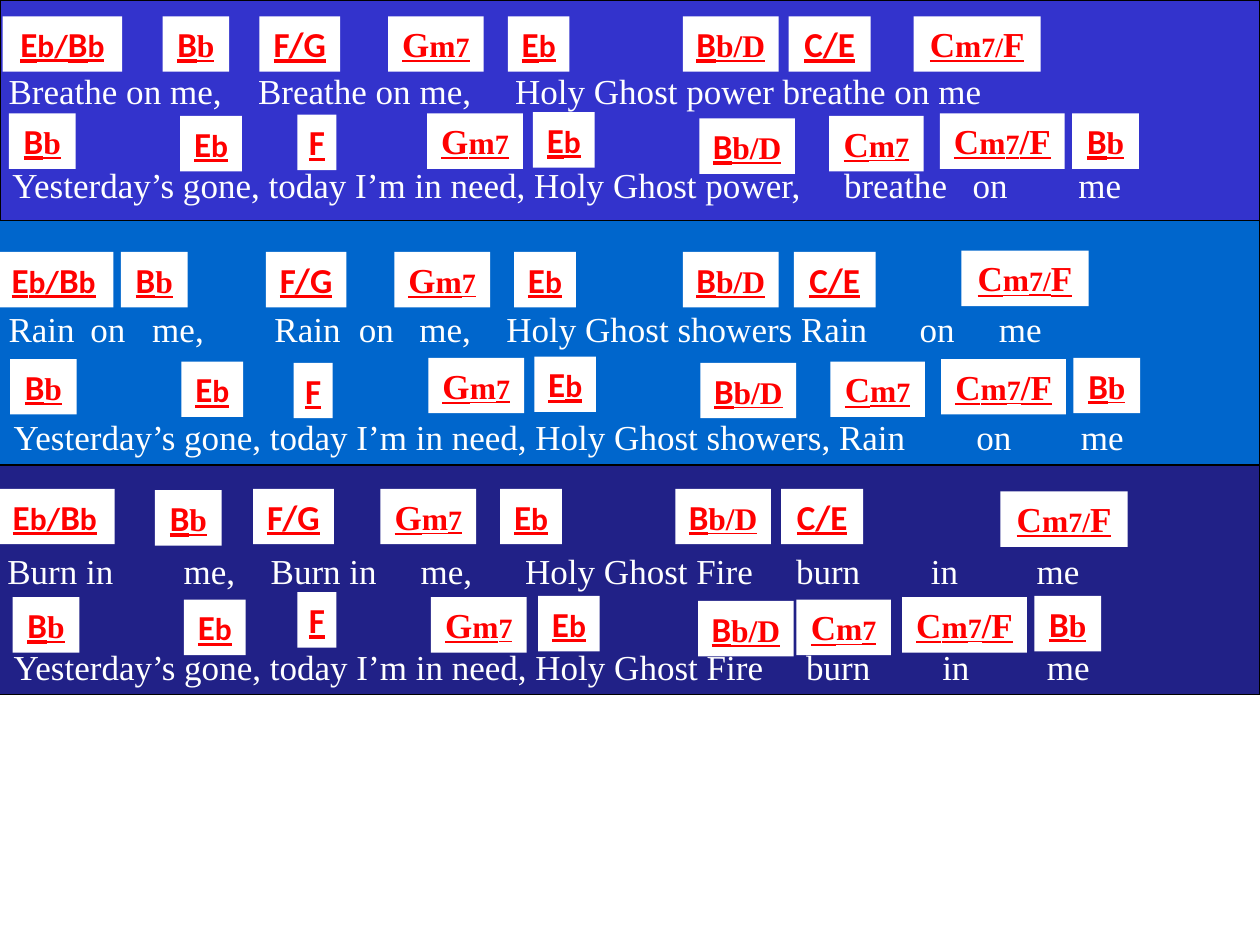
"""Build a song slide with three verses of lyrics and chord labels."""
from dataclasses import dataclass

from lxml import etree
from pptx import Presentation
from pptx.dml.color import RGBColor
from pptx.enum.shapes import MSO_SHAPE
from pptx.enum.text import MSO_ANCHOR, MSO_AUTO_SIZE, PP_ALIGN
from pptx.oxml.ns import qn
from pptx.util import Inches, Pt

RECTANGLE = MSO_SHAPE.RECTANGLE
TOP = MSO_ANCHOR.TOP
FIXED_SIZE = MSO_AUTO_SIZE.NONE
CENTER = PP_ALIGN.CENTER


@dataclass(frozen=True)
class Theme:
    white: RGBColor = RGBColor(0xFF, 0xFF, 0xFF)
    black: RGBColor = RGBColor(0, 0, 0)
    chord: RGBColor = RGBColor(0xFF, 0, 0)
    breathe: RGBColor = RGBColor(0x33, 0x33, 0xCC)
    rain: RGBColor = RGBColor(0, 0x66, 0xCC)
    burn: RGBColor = RGBColor(0x21, 0x21, 0x87)
    serif: str = "Times New Roman"
    sans: str = "Calibri"
    large: int = 20
    medium: int = 18
    small: int = 16
    outline: float = 0.75


theme = Theme()
ROW_HEIGHT = 0.44
TEXT_INSET = 0.1

BANDS = [
    (-0.03, 3.69, 10.03, 1.82, theme.burn),
    (-0.03, 1.75, 10.03, 1.94, theme.rain),
    (0, 0, 10, 1.75, theme.breathe),
]

LYRICS = [
    (-0.03, 0.5, 10, "Breathe on me,",
     [(2.05, "Breathe on me,"), (4.09, "Holy Ghost power breathe on me")]),
    (0, 1.25, 9.58, "Yesterday’s gone, today I’m in need, Holy Ghost power,",
     [(6.7, "breathe"), (7.72, "on"), (8.56, "me")]),
    (-0.03, 2.39, 10, "Rain",
     [(0.72, "on"), (1.21, "me,"), (2.18, "Rain"), (2.85, "on"), (3.33, "me,"),
      (4.02, "Holy Ghost showers Rain"), (7.3, "on"), (7.93, "me")]),
    (0.01, 3.25, 9.58, "Yesterday’s gone, today I’m in need, Holy Ghost showers, Rain",
     [(7.75, "on"), (8.58, "me")]),
    (-0.04, 4.31, 10, "Burn in",
     [(1.46, "me,"), (2.15, "Burn in"), (3.34, "me,"), (4.17, "Holy Ghost Fire"),
      (6.32, "burn"), (7.39, "in"), (8.23, "me")]),
    (0.01, 5.07, 9.58, "Yesterday’s gone, today I’m in need, Holy Ghost Fire",
     [(6.4, "burn"), (7.48, "in"), (8.31, "me")]),
]

SANS_B = ("B", theme.large, theme.sans)
SANS_E = ("E", theme.large, theme.sans)
SANS_FLAT = ("b", theme.medium, theme.sans)
SERIF_C = ("C", theme.large, theme.serif)
SERIF_MINOR = ("m", theme.medium, theme.serif)
SERIF_SEVEN = ("7", theme.small, theme.serif)

CHORDS = {
    "Eb/Bb": (0.95, [SANS_E, ("b/", theme.medium, theme.sans), SANS_B, SANS_FLAT]),
    "Bb": (0.53, [SANS_B, ("b", theme.medium, theme.serif)]),
    "F/G": (0.64, [("F/G", theme.large, theme.sans)]),
    "Gm7": (0.76, [("G", theme.large, theme.serif), SERIF_MINOR, SERIF_SEVEN]),
    "Eb": (0.49, [SANS_E, SANS_FLAT]),
    "Bb/D": (0.76, [SANS_B, ("b/D", theme.medium, theme.serif)]),
    "C/E": (0.65, [("C/E", theme.large, theme.sans)]),
    "Cm7/F small slash": (1.01, [SERIF_C, SERIF_MINOR, ("7/", theme.small, theme.serif),
                                 ("F", theme.large, theme.serif)]),
    "F": (0.31, [("F", theme.large, theme.sans)]),
    "Cm7": (0.75, [SERIF_C, SERIF_MINOR, SERIF_SEVEN]),
    "Cm7/F": (0.99, [SERIF_C, SERIF_MINOR, SERIF_SEVEN, ("/F", theme.large, theme.serif)]),
}

FIRST_LINE = ["Eb/Bb", "Bb", "F/G", "Gm7", "Eb", "Bb/D", "C/E", "Cm7/F small slash"]
SECOND_LINE = ["Bb", "Eb", "F", "Gm7", "Eb", "Bb/D", "Cm7", "Cm7/F", "Bb"]

CHORD_ROWS = [
    (FIRST_LINE, [0.02, 1.29, 2.06, 3.08, 4.03, 5.42, 6.26, 7.25],
     [0.13] * 8),
    (SECOND_LINE, [0.07, 1.43, 2.36, 3.39, 4.23, 5.55, 6.58, 7.46, 8.51],
     [0.9, 0.92, 0.91, 0.9, 0.89, 0.94, 0.92, 0.9, 0.9]),
    (FIRST_LINE, [-0.05, 0.96, 2.11, 3.13, 4.08, 5.42, 6.3, 7.63],
     [2] * 7 + [1.99]),
    (SECOND_LINE, [0.08, 1.44, 2.33, 3.4, 4.24, 5.56, 6.59, 7.47, 8.52],
     [2.85, 2.87, 2.88, 2.84, 2.83, 2.88, 2.87, 2.85, 2.84]),
    (FIRST_LINE, [-0.04, 1.23, 2.01, 3.02, 3.97, 5.36, 6.2, 7.94],
     [3.88, 3.89, 3.88, 3.88, 3.88, 3.88, 3.88, 3.9]),
    (SECOND_LINE, [0.1, 1.46, 2.36, 3.42, 4.27, 5.54, 6.32, 7.16, 8.21],
     [4.74, 4.76, 4.7, 4.74, 4.73, 4.77, 4.76, 4.74, 4.73]),
]

presentation = Presentation()
presentation.slide_width = Inches(10)
presentation.slide_height = Inches(7.5)
slide = presentation.slides.add_slide(presentation.slide_layouts[6])


def add_rectangle(left, top, width, height, color):
    shape = slide.shapes.add_shape(
        RECTANGLE, Inches(left), Inches(top), Inches(width), Inches(height))
    shape.shadow.inherit = False
    shape.fill.solid()
    shape.fill.fore_color.rgb = color
    return shape


for left, top, width, height, color in BANDS:
    band = add_rectangle(left, top, width, height, color)
    band.line.color.rgb = theme.black
    band.line.width = Pt(theme.outline)

for left, top, width, opening, phrases in LYRICS:
    lyric = slide.shapes.add_textbox(
        Inches(left), Inches(top), Inches(width), Inches(ROW_HEIGHT))
    lyric.text_frame.word_wrap = True
    paragraph = lyric.text_frame.paragraphs[0]
    paragraph.add_run().text = "\t".join([opening] + [text for _, text in phrases])
    paragraph.font.name = theme.serif
    paragraph.font.size = Pt(theme.large)
    paragraph.font.color.rgb = theme.white
    properties = paragraph._p.get_or_add_pPr()
    tab_list = etree.Element(qn("a:tabLst"))
    properties.insert(0, tab_list)
    for position, _ in phrases:
        offset = Inches(position - left - TEXT_INSET)
        etree.SubElement(tab_list, qn("a:tab"), pos=str(offset), algn="l")

for names, lefts, tops in CHORD_ROWS:
    for name, left, top in zip(names, lefts, tops):
        width, parts = CHORDS[name]
        label = add_rectangle(left, top, width, ROW_HEIGHT, theme.white)
        label.line.fill.background()
        frame = label.text_frame
        frame.word_wrap = False
        frame.auto_size = FIXED_SIZE
        frame.vertical_anchor = TOP
        paragraph = frame.paragraphs[0]
        paragraph.alignment = CENTER
        paragraph.font.bold = True
        paragraph.font.underline = True
        paragraph.font.color.rgb = theme.chord
        for text, size, font_name in parts:
            run = paragraph.add_run()
            run.text = text
            run.font.size = Pt(size)
            run.font.name = font_name

presentation.save("out.pptx")
